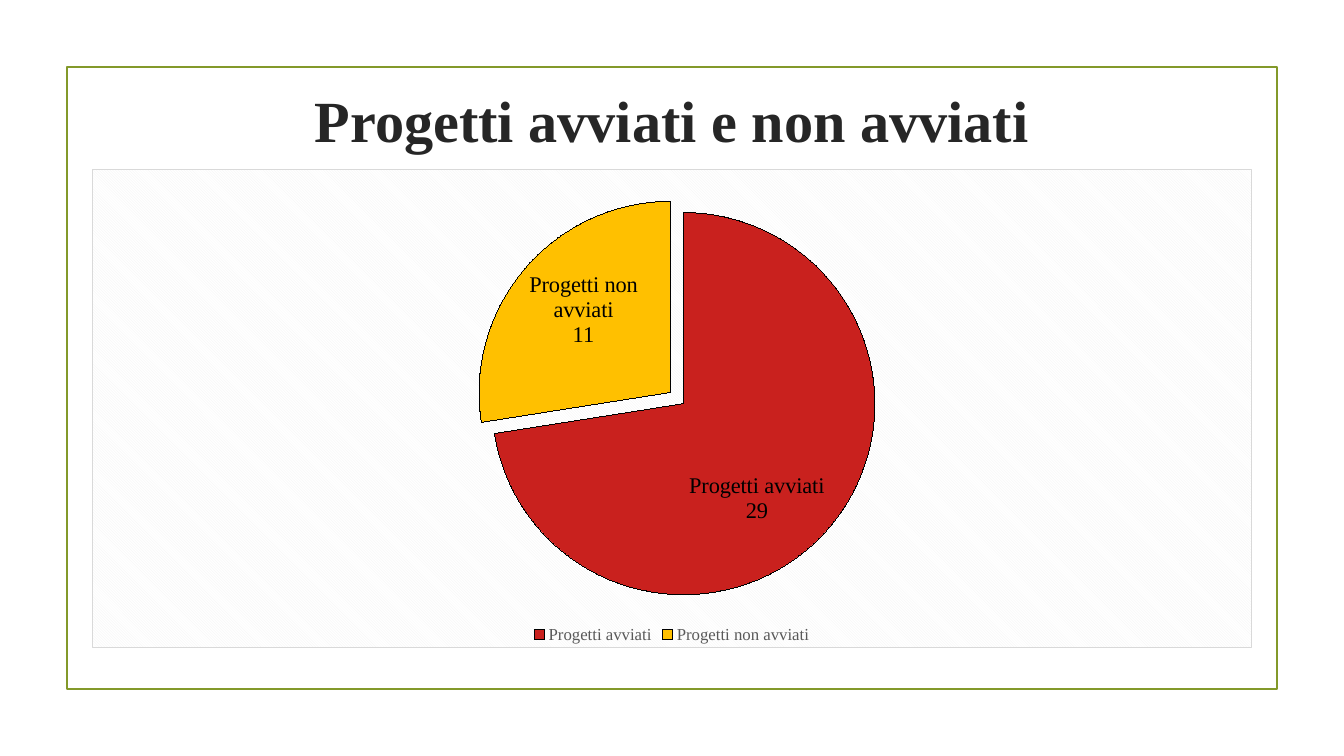
from dataclasses import dataclass

from pptx import Presentation
from pptx.chart.data import CategoryChartData
from pptx.dml.color import RGBColor
from pptx.enum.chart import XL_CHART_TYPE, XL_LABEL_POSITION as LabelPos, XL_LEGEND_POSITION as LegendPos
from pptx.enum.shapes import MSO_SHAPE
from pptx.enum.text import MSO_ANCHOR, PP_ALIGN
from pptx.oxml import parse_xml
from pptx.oxml.ns import nsdecls
from pptx.util import Pt

PX = 9525  # 96 px to the inch


@dataclass(frozen=True)
class Theme:
    font: str = "Times New Roman"
    frame: str = "83992A"
    title: str = "262626"
    label: str = "000000"
    legend: str = "595959"
    border: str = "D9D9D9"
    hatch: str = "F2F2F2"
    paper: str = "FFFFFF"
    title_size: float = 41.6
    label_size: int = 16
    legend_size: int = 12


THEME = Theme()
PROJECTS = {"Progetti avviati": (29, "C9211E"), "Progetti non avviati": (11, "FFC000")}
EXPLODED, EXPLOSION = 1, 9
PIE_LAYOUT = {"x": 0.34, "y": 0.09, "w": 0.34, "h": 0.8}


def emu(box):
    return [length * PX for length in box]


def apply(target, values):
    for name, value in values.items():
        setattr(target, name, value)


def style_font(font, size, color, bold=False):
    apply(font, {"name": THEME.font, "size": Pt(size), "bold": bold})
    font.color.rgb = RGBColor.from_string(color)


def add_frame(slide, box):
    frame = slide.shapes.add_shape(MSO_SHAPE.RECTANGLE, *emu(box))
    frame.shadow.inherit = False
    frame.fill.background()
    frame.line.color.rgb = RGBColor.from_string(THEME.frame)
    frame.line.width = Pt(1.25)


def add_title(slide, box, wording):
    title = slide.shapes.add_textbox(*emu(box)).text_frame
    apply(title, {"word_wrap": True, "vertical_anchor": MSO_ANCHOR.MIDDLE})
    heading = title.paragraphs[0]
    apply(heading, {"text": wording, "alignment": PP_ALIGN.CENTER, "line_spacing": 0.9})
    style_font(heading.runs[0].font, THEME.title_size, THEME.title, bold=True)


def add_project_pie(slide, box):
    data = CategoryChartData()
    data.categories = list(PROJECTS)
    data.add_series("Series 1", [count for count, _ in PROJECTS.values()])
    chart = slide.shapes.add_chart(XL_CHART_TYPE.PIE, *emu(box), data).chart
    apply(chart, {"has_title": False, "has_legend": True})
    style_font(chart.font, 10, THEME.label)
    apply(chart.legend, {"position": LegendPos.BOTTOM, "include_in_layout": False})
    style_font(chart.legend.font, THEME.legend_size, THEME.legend)

    # Slices
    plot = chart.plots[0]
    plot.vary_by_categories = True
    slices = plot.series[0]
    for index, (_, color) in enumerate(PROJECTS.values()):
        look = slices.points[index].format
        look.fill.solid()
        look.fill.fore_color.rgb = RGBColor.from_string(color)
        look.line.color.rgb = RGBColor.from_string(THEME.label)
        look.line.width = Pt(0)
    slice_look = slices._element.findall("{*}dPt")[EXPLODED].find("{*}spPr")
    slice_look.addprevious(parse_xml(f'<c:explosion {nsdecls("c")} val="{EXPLOSION}"/>'))

    # Labels: category above value, wrapped inside the slice
    labels = slices.data_labels
    apply(labels, {"show_category_name": True, "show_value": True, "show_percentage": False,
                   "show_legend_key": False, "position": LabelPos.INSIDE_END})
    style_font(labels.font, THEME.label_size, THEME.label)
    labels._element.find("{*}txPr/{*}bodyPr").set("wrap", "square")
    labels._element.find("{*}showBubbleSize").addnext(
        parse_xml(f'<c:separator {nsdecls("c")}>\n</c:separator>'))

    # Plot position
    plot_area = chart._chartSpace.find(".//{*}plotArea")
    for layout in plot_area.findall("{*}layout"):
        plot_area.remove(layout)
    modes = "".join(f'<c:{axis}Mode val="edge"/>' for axis in "xy")
    sizes = "".join(f'<c:{side} val="{part}"/>' for side, part in PIE_LAYOUT.items())
    plot_area.insert(0, parse_xml(
        f'<c:layout {nsdecls("c")}><c:manualLayout><c:layoutTarget val="inner"/>'
        f'{modes}{sizes}</c:manualLayout></c:layout>'))

    # Hatched background with border
    chart._chartSpace.find("{*}txPr").addprevious(parse_xml(
        f'<c:spPr {nsdecls("c", "a")}><a:pattFill prst="ltDnDiag">'
        f'<a:fgClr><a:srgbClr val="{THEME.hatch}"/></a:fgClr>'
        f'<a:bgClr><a:srgbClr val="{THEME.paper}"/></a:bgClr></a:pattFill>'
        f'<a:ln w="{Pt(0.75)}"><a:solidFill><a:srgbClr val="{THEME.border}"/></a:solidFill></a:ln>'
        f'</c:spPr>'))


def build_slide(deck, box):
    slide = deck.slides.add_slide(deck.slide_layouts[6])
    left, top, width, height = box
    add_frame(slide, box)
    add_title(slide, (left + 72, top + 16, width - 144, 76), "Progetti avviati e non avviati")
    add_project_pie(slide, (left + 24, top + 97, width - 48, height - 136))


def main():
    deck = Presentation()
    apply(deck, {"slide_width": 1280 * PX, "slide_height": 720 * PX})
    build_slide(deck, (64, 64, 1152, 592))
    deck.save("out.pptx")


if __name__ == "__main__":
    main()
